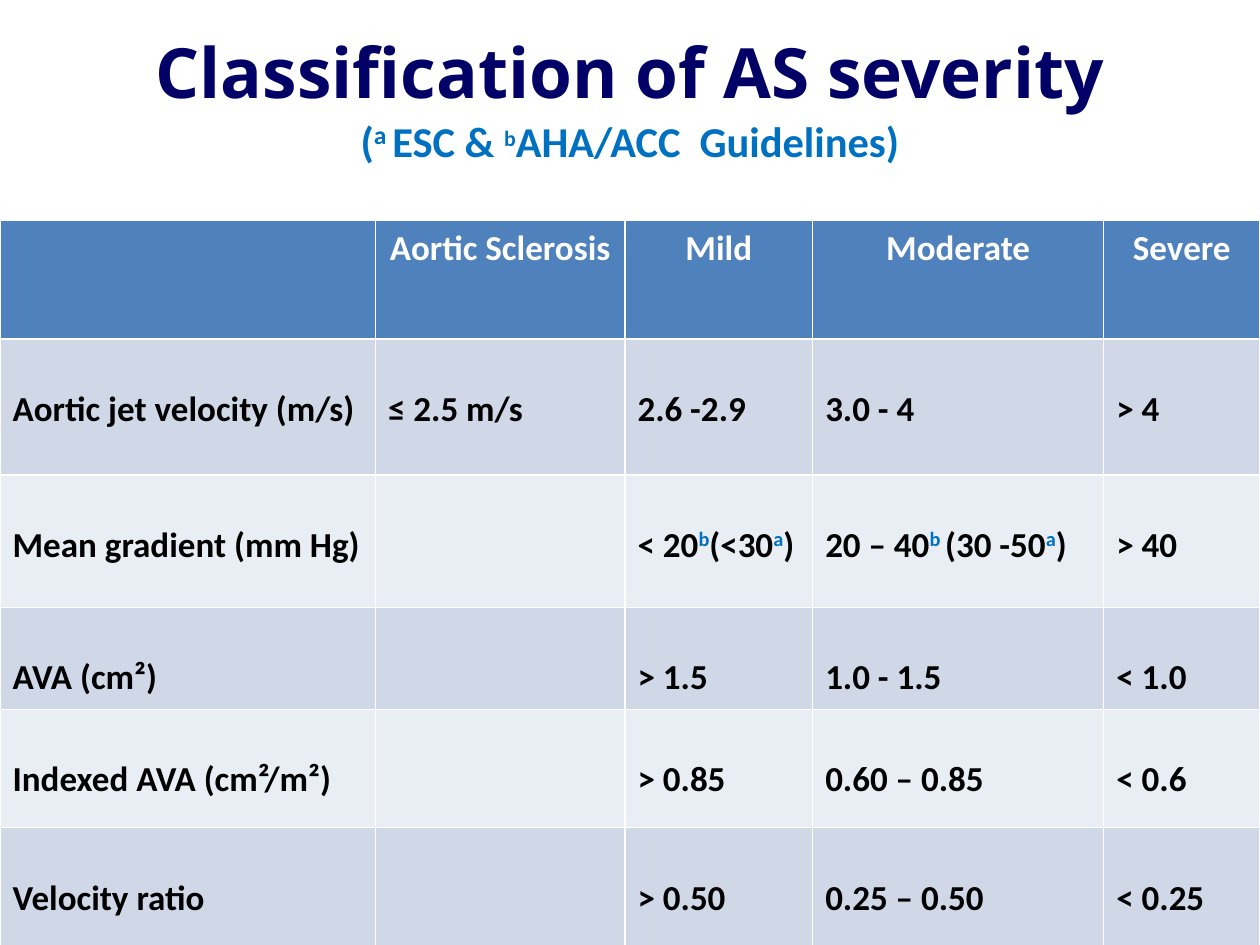
from pptx import Presentation
from pptx.dml.color import RGBColor
from pptx.enum.text import MSO_ANCHOR, PP_ALIGN as Align
from pptx.util import Inches, Pt

# Content: text between carets is raised
TITLE = "Classification of AS severity"
GUIDELINES = "(^a ^ESC & ^b^AHA/ACC  Guidelines)"
GRADES = ["", "Aortic Sclerosis", "Mild", "Moderate", "Severe"]
MEASURES = [
    ["Aortic jet velocity (m/s)", "≤ 2.5 m/s", "2.6 -2.9", "3.0 - 4", "> 4"],
    ["Mean gradient (mm Hg)", "", "< 20^b^(<30^a^)", "20 – 40^b ^(30 -50^a^)", "> 40"],
    ["AVA (cm²)", "", "> 1.5", "1.0 - 1.5", "< 1.0"],
    ["Indexed AVA (cm²/m²)", "", "> 0.85", "0.60 – 0.85", "< 0.6"],
    ["Velocity ratio", "", "> 0.50", "0.25 – 0.50", "< 0.25"],
]

COLORS = {"title": "000066", "note": "0070C0", "header": "4F81BD",
          "header_text": "FFFFFF", "text": "000000",
          "odd_row": "D0D8E8", "even_row": "E9EDF4"}
WIDTH, HEIGHT = 10, 7.5
COLUMNS = [2.98, 1.98, 1.49, 2.31, 1.24]
ROWS = [0.94, 1.08, 1.05, 0.81, 0.94, 0.94]
TABLE_TOP = 1.75
LINE = 0.34  # one line of table text


def write(paragraph, text, size=20, color="text", font="Calibri",
          align=Align.LEFT, raised_sizes=()):
    """Fill a paragraph, raising the parts between carets in the note colour."""
    paragraph.alignment = align
    for i, part in enumerate(text.split("^")):
        if not part:
            continue
        raised = i % 2 == 1
        run = paragraph.add_run()
        run.text = part
        run.font.name, run.font.bold = font, True
        run.font.size = Pt(raised_sizes[i // 2] if raised and raised_sizes else size)
        run.font.color.rgb = RGBColor.from_string(COLORS["note" if raised else color])
        if raised:
            run.font._element.set("baseline", "30000")


deck = Presentation()
deck.slide_width, deck.slide_height = Inches(WIDTH), Inches(HEIGHT)
slide = deck.slides.add_slide(deck.slide_layouts[6])

# Heading
heading = slide.shapes.add_textbox(
    Inches(0.05 * WIDTH), Inches(0.04 * HEIGHT), Inches(0.9 * WIDTH), Inches(1.7)).text_frame
heading.word_wrap = True
heading.vertical_anchor = MSO_ANCHOR.TOP
heading.margin_top = Inches(0.01)
heading.paragraphs[0].line_spacing = 0.9
write(heading.paragraphs[0], TITLE, size=39.6, color="title", font="Noto Sans",
      align=Align.CENTER)
write(heading.add_paragraph(), GUIDELINES, size=24.3, color="note",
      align=Align.CENTER, raised_sizes=(25.2, 21.6))

# Severity table
severity = slide.shapes.add_table(
    len(ROWS), len(COLUMNS), 0, Inches(TABLE_TOP),
    Inches(WIDTH), Inches(HEIGHT - TABLE_TOP)).table
for column, width in zip(severity.columns, COLUMNS):
    column.width = Inches(width)
for row, height in zip(severity.rows, ROWS):
    row.height = Inches(height)

for r, values in enumerate([GRADES] + MEASURES):
    fill = "header" if r == 0 else "odd_row" if r % 2 else "even_row"
    for c, value in enumerate(values):
        cell = severity.cell(r, c)
        cell.fill.solid()
        cell.fill.fore_color.rgb = RGBColor.from_string(COLORS[fill])
        paragraph = cell.text_frame.paragraphs[0]
        if r == 0:
            write(paragraph, value, color="header_text", align=Align.CENTER)
        else:
            cell.margin_top = Inches(0.05 + LINE)
            write(paragraph, value, align=Align.LEFT if c else Align.JUSTIFY)

deck.save("out.pptx")
